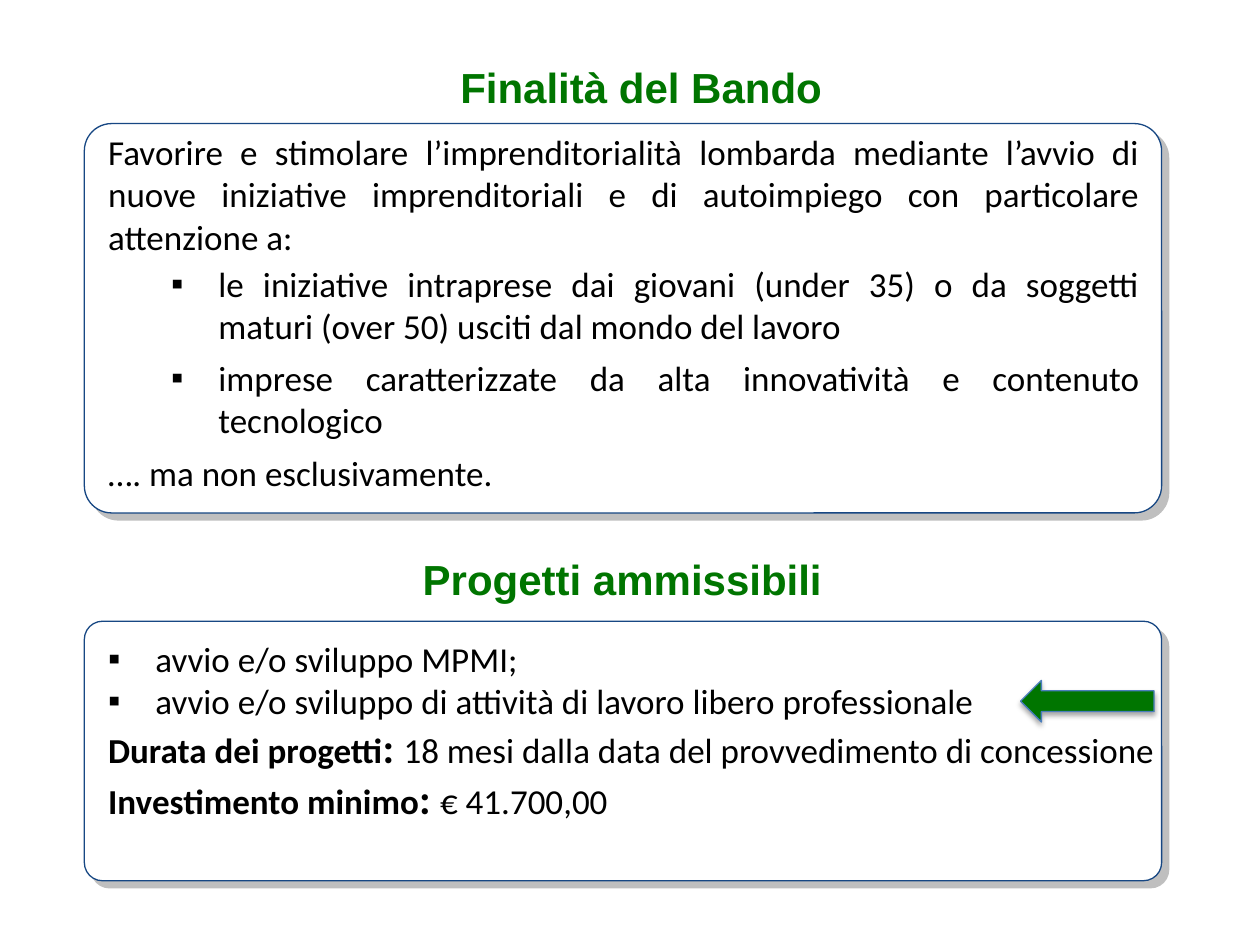
from lxml import etree
from pptx import Presentation
from pptx.dml.color import RGBColor
from pptx.enum.shapes import MSO_SHAPE as Shape
from pptx.enum.text import MSO_AUTO_SIZE as Fit, PP_ALIGN as Align
from pptx.oxml.ns import qn
from pptx.util import Pt

GREEN = "007500"


def paint(target, color):
    """Set a fill or a font to a hex colour."""
    if hasattr(target, "solid"):
        target.solid()
        target.fore_color.rgb = RGBColor.from_string(color)
    else:
        target.color.rgb = RGBColor.from_string(color)


def shade(shape, color, alpha, blur, dist, angle):
    """Give a shape an outer shadow; alpha in percent, lengths in points."""
    shape.shadow.inherit = False
    effects = shape._element.spPr.find(qn("a:effectLst"))
    outer = etree.SubElement(
        effects, qn("a:outerShdw"), blurRad=str(Pt(blur)), dist=str(Pt(dist)),
        dir=str(angle * 60000), algn="ctr", rotWithShape="0")
    tint = etree.SubElement(outer, qn("a:srgbClr"), val=color)
    etree.SubElement(tint, qn("a:alpha"), val=str(alpha * 1000))


def add_form(slide, kind, box, fill, line):
    """Add a preset shape with a thin outline."""
    shape = slide.shapes.add_shape(kind, *map(Pt, box))
    paint(shape.fill, fill)
    paint(shape.line.fill, line)
    shape.line.width = Pt(0.75)
    return shape


def add_panel(slide, box):
    """Add a white rounded panel with a grey shadow."""
    panel = add_form(slide, Shape.ROUNDED_RECTANGLE, box, "FFFFFF", "174783")
    panel.adjustments[0] = 0.07
    shade(panel, "808080", 50, 0, 5.7, 45)


def add_frame(slide, box):
    """Add a wrapping text box and return its frame."""
    frame = slide.shapes.add_textbox(*map(Pt, box)).text_frame
    frame.word_wrap = True
    frame.auto_size = Fit.SHAPE_TO_FIT_TEXT
    return frame


def add_run(para, text, size=20, bold=False, face="Calibri", color="000000"):
    """Add one styled run to a paragraph."""
    run = para.add_run()
    run.text = text
    run.font.size, run.font.bold, run.font.name = Pt(size), bold, face
    paint(run.font, color)


def add_title(slide, box, text):
    """Add a centred green heading."""
    para = add_frame(slide, box).paragraphs[0]
    para.alignment = Align.CENTER
    add_run(para, text, 24, True, "Arial", GREEN)


def add_para(frame, runs, indent=None, gap=0):
    """Add a justified paragraph, bulleted when an indent is given."""
    first = frame.paragraphs[0]
    para = frame.add_paragraph() if first.runs else first
    para.alignment = Align.JUSTIFY
    if indent is not None:
        props = para._p.get_or_add_pPr()
        props.set("marL", str(Pt(indent)))
        props.set("indent", str(Pt(-27)))
        etree.SubElement(props, qn("a:buFont"), typeface="Arial")
        etree.SubElement(props, qn("a:buChar"), char="▪")
    if gap:
        para.space_before = para.space_after = Pt(gap)
    for run in runs:
        add_run(para, *run)


def add_aims(slide, x, y, w, h):
    """Place the section on the aims of the call."""
    add_title(slide, (x + 31.7, y - 38.9, 573, 36), "Finalità del Bando")
    add_panel(slide, (x, y, w, h))
    frame = add_frame(slide, (x + 6.5, y + 0.7, w - 12.2, h - 3))
    add_para(frame, [(
        "Favorire e stimolare l’imprenditorialità lombarda mediante l’avvio di "
        "nuove iniziative imprenditoriali e di autoimpiego con particolare "
        "attenzione a:",)])
    for text in (
            "le iniziative intraprese dai giovani (under 35) o da soggetti "
            "maturi (over 50) usciti dal mondo del lavoro",
            "imprese caratterizzate da alta innovatività e contenuto tecnologico"):
        add_para(frame, [(text,)], indent=63, gap=3)
    add_para(frame, [("…. ma non esclusivamente.",)], gap=3)


def add_projects(slide, x, y, w, h):
    """Place the section on eligible projects, with its arrow."""
    add_title(slide, (x + 20.9, y - 42.5, 573, 36), "Progetti ammissibili")
    add_panel(slide, (x, y, w, h))
    frame = add_frame(slide, (x + 6.5, y + 5.8, w - 0.7, h - 10))
    for text in (
            "avvio e/o sviluppo MPMI;",
            "avvio e/o sviluppo di attività di lavoro libero professionale"):
        add_para(frame, [(text,)], indent=27)
    for label, text in (
            ("Durata dei progetti",
             "18 mesi dalla data del provvedimento di concessione"),
            ("Investimento minimo", "€ 41.700,00")):
        add_para(frame, [(label, 20, True), (": ", 24, True), (text,)])
    arrow = add_form(slide, Shape.LEFT_ARROW,
                     (x + 535, y + 33.8, 76.3, 23.8), GREEN, "4B7EBC")
    shade(arrow, "000000", 35, 3.1, 1.8, 90)


def main():
    """Build and save the slide."""
    deck = Presentation()
    deck.slide_width, deck.slide_height = Pt(720), Pt(540)
    slide = deck.slides.add_slide(deck.slide_layouts[6])
    add_aims(slide, 48.2, 70.6, 615.6, 222.5)
    add_projects(slide, 48.2, 355, 615.6, 148.3)
    deck.save("out.pptx")


if __name__ == "__main__":
    main()
